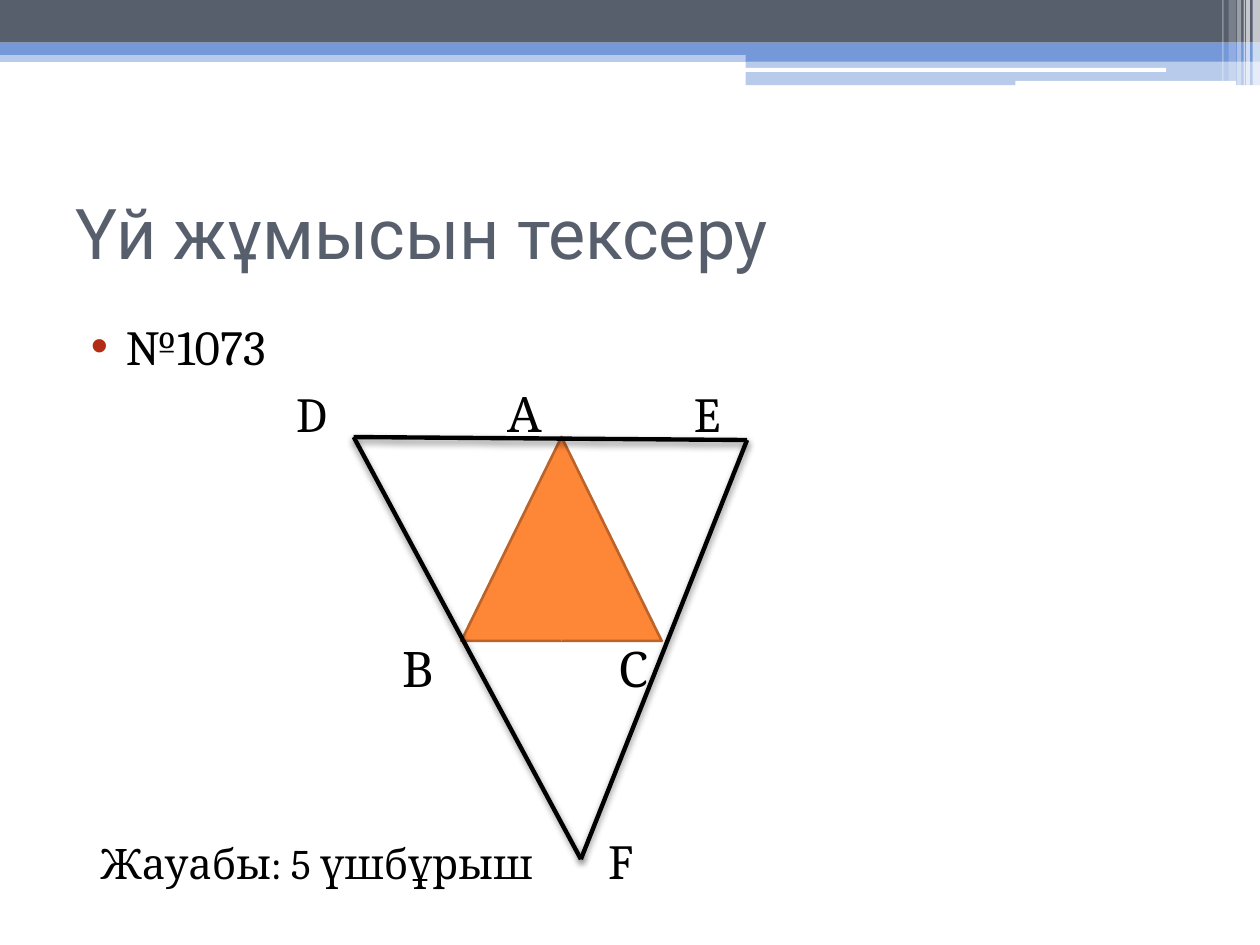
from lxml.etree import SubElement
from pptx import Presentation
from pptx.dml.color import RGBColor
from pptx.enum.shapes import MSO_CONNECTOR, MSO_SHAPE
from pptx.enum.text import MSO_ANCHOR, PP_ALIGN
from pptx.oxml.ns import qn
from pptx.util import Cm, Pt

INK, SLATE, BLUE, WHITE = "000000", "575F6D", "7598D9", "FFFFFF"
ORANGE, BROWN, RED = "FE8637", "BC6329", "B32C16"


def color(value):
    return RGBColor.from_string(value)


def add_element(parent, tag, **attributes):
    return SubElement(parent, qn(tag), attributes)


def format_text(paragraph, size, font, ink):
    for run in paragraph.runs:
        run.font.size = Pt(size)
        run.font.name = font
        run.font.color.rgb = color(ink)


def place(shape, box):
    shape.left, shape.top, shape.width, shape.height = [Cm(value) for value in box]


def add_filled_shape(slide, kind, box, fill, opacity=100):
    shape = slide.shapes.add_shape(kind, *[Cm(value) for value in box])
    shape.shadow.inherit = False
    shape.fill.solid()
    shape.fill.fore_color.rgb = color(fill)
    shape.line.fill.background()
    if opacity < 100:
        fill_color = shape.fill._xPr.find(qn("a:solidFill"))[0]
        add_element(fill_color, "a:alpha", val=str(opacity * 1000))
    return shape


def add_line(slide, start, end, ink, width, shadow=False):
    line = slide.shapes.add_connector(
        MSO_CONNECTOR.STRAIGHT, *[Cm(value) for value in (*start, *end)])
    line.line.color.rgb = color(ink)
    line.line.width = Pt(width)
    effects = add_element(line._element.spPr, "a:effectLst")
    if shadow:
        outer = add_element(effects, "a:outerShdw", blurRad=str(Pt(4)),
                            dist=str(Pt(2)), dir="5400000", rotWithShape="0")
        shadow_color = add_element(outer, "a:srgbClr", val=INK)
        add_element(shadow_color, "a:alpha", val="45000")


def add_label(slide, text, left, top, width=1.2, size=28):
    label = slide.shapes.add_textbox(Cm(left), Cm(top), Cm(width), Cm(1.2))
    frame = label.text_frame
    frame.word_wrap = True
    frame.margin_left = frame.margin_right = 0
    frame.margin_top = frame.margin_bottom = 0
    frame.text = text
    format_text(frame.paragraphs[0], size, "Cambria", INK)


def add_header(slide, left, top, width):
    right = left + width
    bars = [  # offset from left, offset from top, width, height, fill, opacity
        (0, 1.02, width, 0.23, BLUE, 50),
        (0, 0, width, 0.86, SLATE, 100),
        (0, 0.86, width, 0.25, BLUE, 100),
        (15.03, 0.99, width - 15.03, 0.25, BLUE, 100),
        (15.03, 1.22, width - 15.03, 0.5, BLUE, 50),
    ]
    for x, y, bar_width, height, fill, opacity in bars:
        add_filled_shape(slide, MSO_SHAPE.RECTANGLE,
                         (left + x, top + y, bar_width, height), fill, opacity)
    for x, y, bar_width, height in [(15.01, 1.37, 8.5, 0.08), (20.47, 1.63, 4.45, 0.1)]:
        add_filled_shape(slide, MSO_SHAPE.ROUNDED_RECTANGLE,
                         (left + x, top + y, bar_width, height), WHITE)
    stripes = [  # distance from right, width, height, opacity
        (0.15, 0.15, 1.73, 65), (0.28, 0.08, 1.73, 65), (0.33, 0.03, 1.73, 60),
        (0.46, 0.08, 1.73, 40), (0.63, 0.15, 1.63, 20), (0.76, 0.03, 1.63, 30),
    ]
    for x, stripe_width, height, opacity in stripes:
        add_filled_shape(slide, MSO_SHAPE.RECTANGLE,
                         (right - x, top, stripe_width, height), WHITE, opacity)


def add_title(slide, box):
    title = slide.shapes.title
    place(title, box)
    frame = title.text_frame
    frame.text = "Үй жұмысын тексеру"
    frame.vertical_anchor = MSO_ANCHOR.MIDDLE
    paragraph = frame.paragraphs[0]
    paragraph.alignment = PP_ALIGN.LEFT
    format_text(paragraph, 40, "Roboto", SLATE)


def add_task(slide, box):
    body = slide.placeholders[1]
    place(body, box)
    body.text_frame.text = "№1073"
    paragraph = body.text_frame.paragraphs[0]
    paragraph.space_before = Pt(3)
    format_text(paragraph, 28, "Cambria", INK)
    properties = paragraph._p.get_or_add_pPr()
    properties.set("marL", str(Cm(1.02)))
    properties.set("indent", str(Cm(-0.71)))
    bullet_color = add_element(properties, "a:buClr")
    add_element(bullet_color, "a:srgbClr", val=RED)
    add_element(properties, "a:buChar", char="•")


def add_triangles(slide, left, top):
    """Triangle DEF with triangle ABC inside it."""
    def at(x, y):
        return left + x, top + y

    inner_width, inner_height = 4.04, 4.11
    inner = add_filled_shape(slide, MSO_SHAPE.ISOSCELES_TRIANGLE,
                             (*at(3.4, 1.11), inner_width, inner_height), ORANGE)
    inner.line.color.rgb = color(BROWN)
    inner.line.width = Pt(1.5)
    middle = 3.4 + inner_width / 2
    add_line(slide, at(middle, 1.11), at(middle, 1.11 + inner_height), ORANGE, 0.75)

    corner_d, corner_e, corner_f = at(1.23, 1.11), at(9.16, 1.17), at(5.81, 9.62)
    for start, end in [(corner_d, corner_e), (corner_f, corner_d), (corner_f, corner_e)]:
        add_line(slide, start, end, INK, 2.5, shadow=True)

    labels = [("D", 0.07, 0.04), ("А", 4.34, 0.04), ("E", 8.09, 0.04),
              ("В", 2.22, 5.18), ("С", 6.56, 5.18), ("F", 6.36, 9.05)]
    for text, x, y in labels:
        add_label(slide, text, *at(x, y))


def main():
    presentation = Presentation()
    presentation.slide_width, presentation.slide_height = Cm(25.4), Cm(19.05)
    slide = presentation.slides.add_slide(presentation.slide_layouts[1])
    add_header(slide, 0, 0, 25.4)
    add_title(slide, (1.27, 3.18, 22.86, 2.97))
    add_task(slide, (1.27, 6.25, 22.86, 12.01))
    add_triangles(slide, 5.9, 7.7)
    add_label(slide, "Жауабы: 5 үшбұрыш", 2.03, 16.88, width=9.2, size=24)
    presentation.save("out.pptx")


if __name__ == "__main__":
    main()
